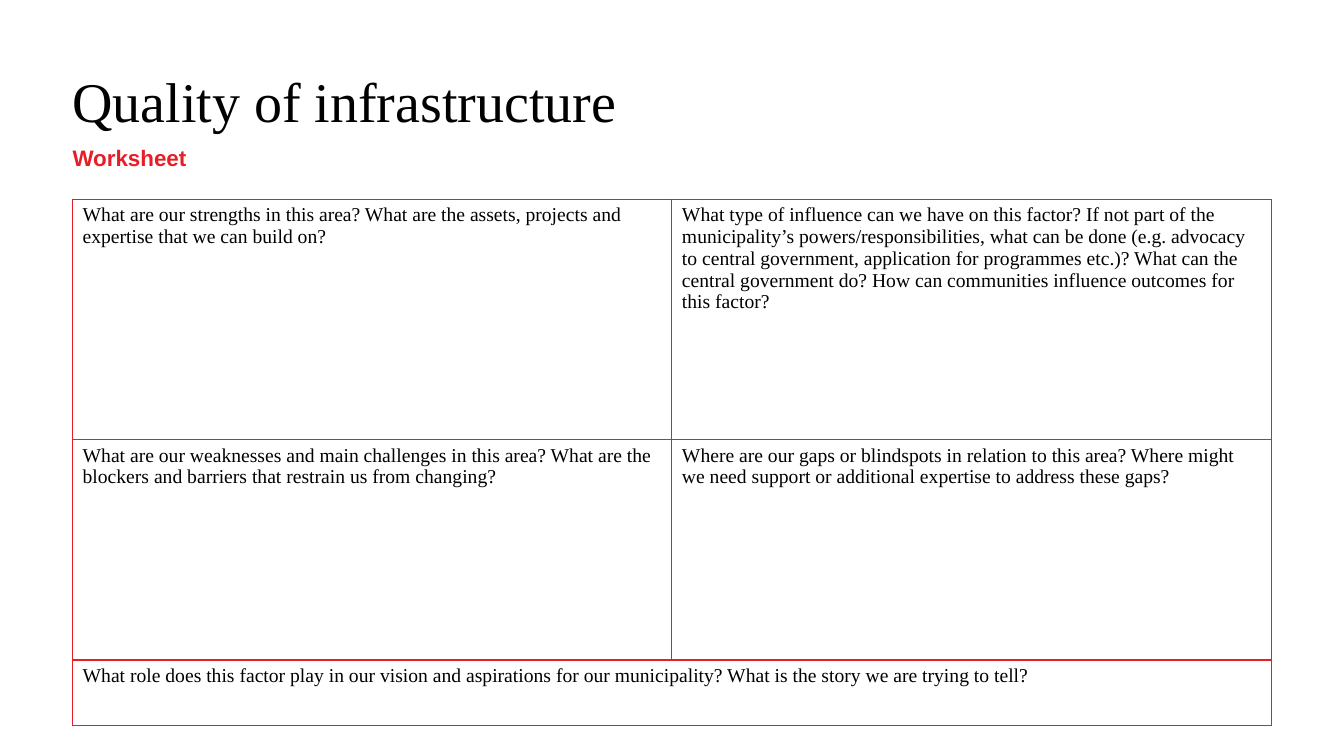
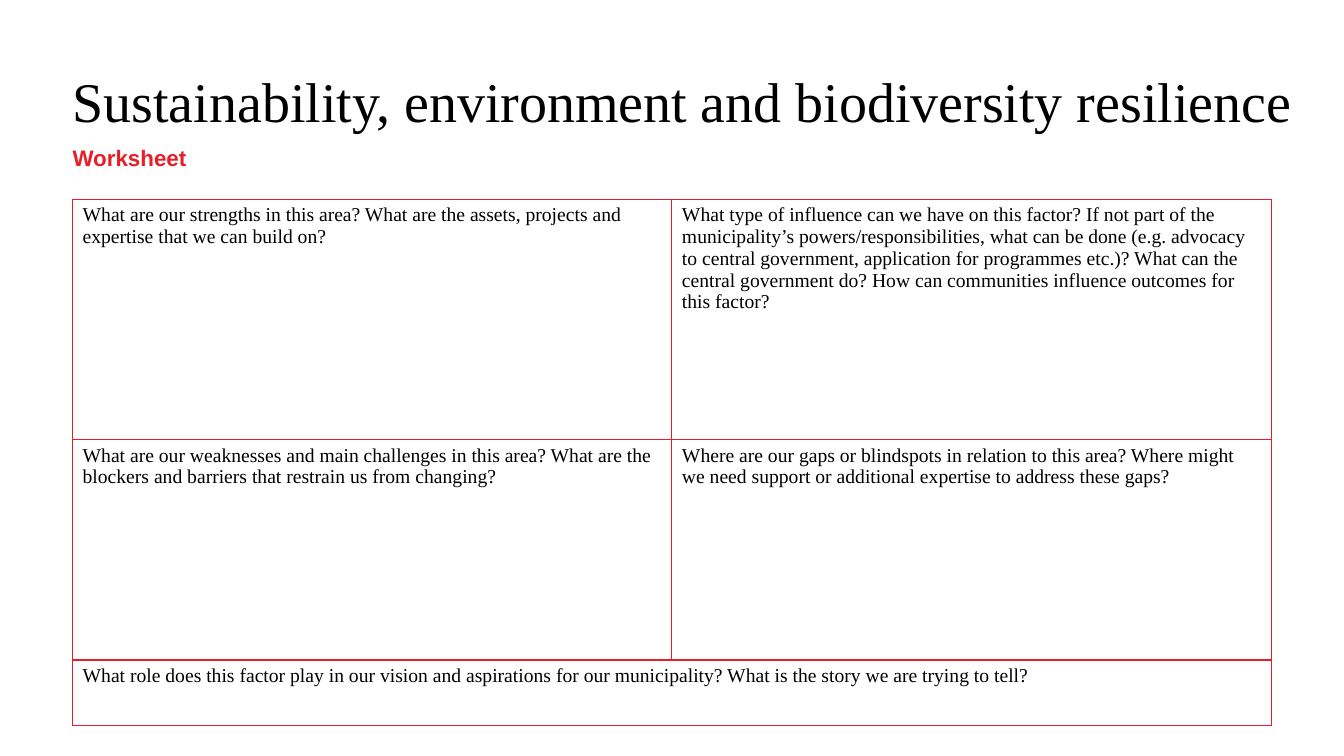
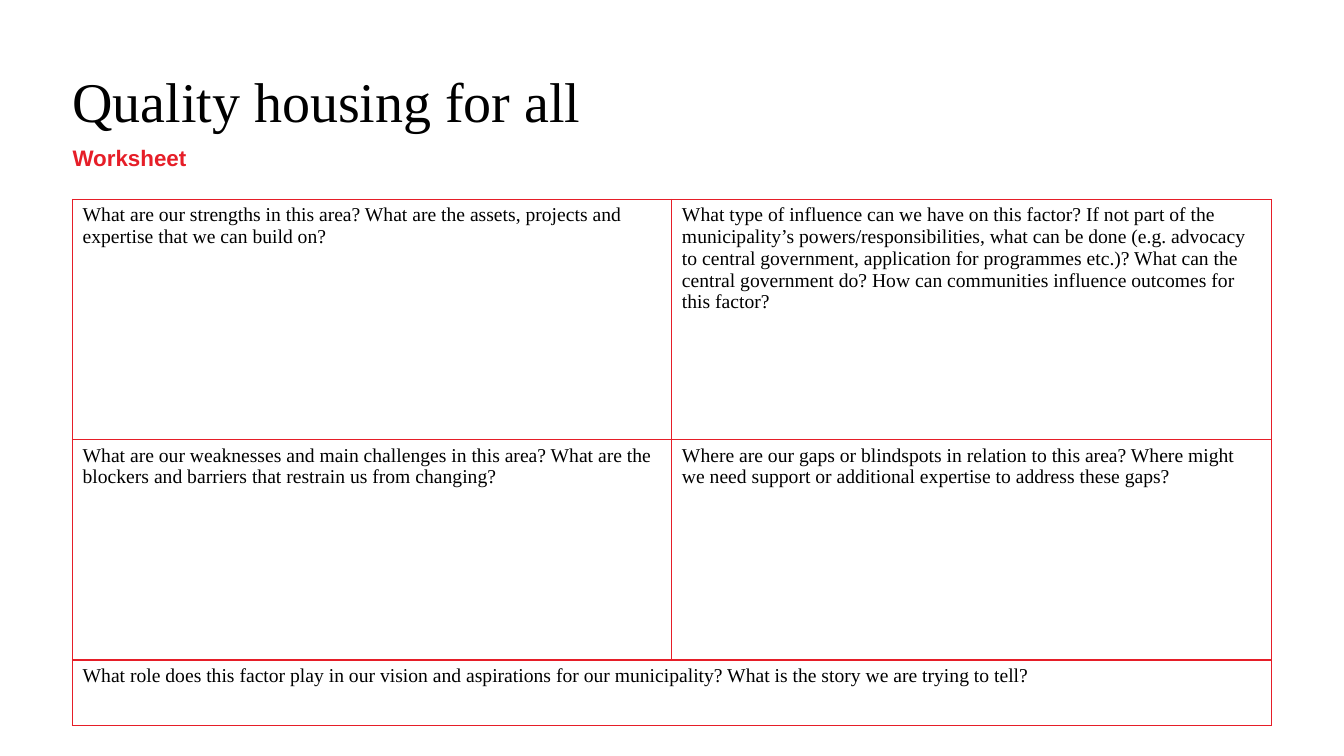
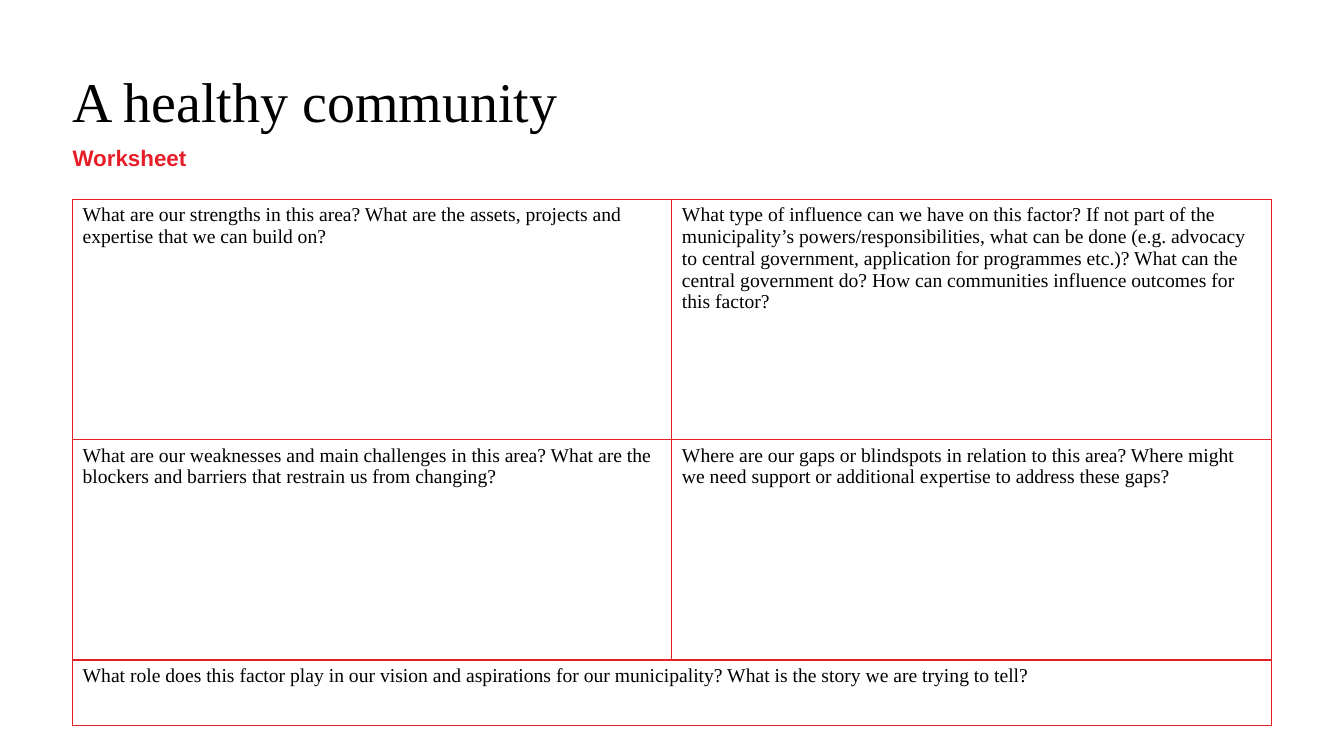
from typing import NamedTuple

from pptx import Presentation
from pptx.dml.color import RGBColor as Rgb
from pptx.enum.text import MSO_ANCHOR as Anchor, MSO_AUTO_SIZE as Fit, PP_ALIGN as Align
from pptx.oxml import parse_xml
from pptx.oxml.ns import nsdecls
from pptx.util import Pt

HUES = {"ink": "000000", "red": "E61E28", "back": "FFFFFF"}
SERIF, SANS = "Times New Roman", "Arial"
LEFT = 51.84


class Style(NamedTuple):
    font: str
    size: float
    hue: str
    bold: bool = False


class Sheet(NamedTuple):
    title: str
    width: float = 880.56


HEAD = Style(SERIF, 40, "ink")
SUB = Style(SANS, 16, "red", True)
BODY = Style(SERIF, 14, "ink")

SHEETS = [
    Sheet("Quality of infrastructure", 710.64),
    Sheet("Sustainability, environment and biodiversity resilience"),
    Sheet("Quality housing for all"),
    Sheet("A healthy community"),
]

COLS = [428.1, 428.1]
ROWS = [171.5, 157.5, 46.8]
ASKS = [
    [
        "What are our strengths in this area? What are the assets, projects and "
        "expertise that we can build on?",
        "What type of influence can we have on this factor? If not part of the "
        "municipality’s powers/responsibilities, what can be done (e.g. advocacy "
        "to central government, application for programmes etc.)? What can the "
        "central government do? How can communities influence outcomes for this factor?",
    ],
    [
        "What are our weaknesses and main challenges in this area? What are the "
        "blockers and barriers that restrain us from changing?",
        "Where are our gaps or blindspots in relation to this area? Where might we "
        "need support or additional expertise to address these gaps?",
    ],
    [
        "What role does this factor play in our vision and aspirations for our "
        "municipality? What is the story we are trying to tell?",
    ],
]


def write(frame, text: str, style: Style):
    """Fill the frame with one styled paragraph and return it."""
    frame.text = text
    para = frame.paragraphs[0]
    para.alignment = Align.LEFT
    font = para.font
    font.name, font.size, font.bold = style.font, Pt(style.size), style.bold
    font.color.rgb = Rgb.from_string(HUES[style.hue])
    return para


def place(shape, top: float, width: float, height: float) -> None:
    """Set the box on the left margin, with no insets."""
    shape.left, shape.top = Pt(LEFT), Pt(top)
    shape.width, shape.height = Pt(width), Pt(height)
    frame = shape.text_frame
    frame.margin_left = frame.margin_right = frame.margin_top = frame.margin_bottom = 0
    frame.word_wrap = True
    frame.auto_size = Fit.NONE
    frame.vertical_anchor = Anchor.TOP


def edge(cell, hue: str) -> None:
    """Draw a 1 pt line on all four sides of the cell."""
    props = cell._tc.get_or_add_tcPr()
    for spot, side in enumerate("LRTB"):
        props.insert(spot, parse_xml(
            f'<a:ln{side} {nsdecls("a")} w="{Pt(1)}"><a:solidFill>'
            f'<a:srgbClr val="{HUES[hue]}"/></a:solidFill></a:ln{side}>'))


def add_grid(slide) -> None:
    frame = slide.shapes.add_table(
        len(ROWS), len(COLS), Pt(LEFT), Pt(142.5), Pt(sum(COLS)), Pt(sum(ROWS)))
    table = frame.table
    table.first_row = table.horz_banding = False
    for col, width in zip(table.columns, COLS):
        col.width = Pt(width)
    for row, height in zip(table.rows, ROWS):
        row.height = Pt(height)
    for cell in table.iter_cells():
        cell.fill.background()
        edge(cell, "red")
    for row, asks in enumerate(ASKS):
        for col, ask in enumerate(asks):
            write(table.cell(row, col).text_frame, ask, BODY)
    table.cell(2, 0).merge(table.cell(2, 1))


def add_sheet(deck, sheet: Sheet) -> None:
    slide = deck.slides.add_slide(deck.slide_layouts[5])
    fill = slide.background.fill
    fill.solid()
    fill.fore_color.rgb = Rgb.from_string(HUES["back"])

    title = slide.shapes.title
    place(title, 51.84, sheet.width, 41.76)
    write(title.text_frame, sheet.title, HEAD).line_spacing = Pt(44)

    label = slide.shapes.add_textbox(0, 0, 0, 0)
    place(label, 102.96, 419, 19.44)
    write(label.text_frame, "Worksheet", SUB).space_after = Pt(9)

    add_grid(slide)


def main() -> None:
    deck = Presentation()
    deck.slide_width, deck.slide_height = Pt(960), Pt(540)
    for sheet in SHEETS:
        add_sheet(deck, sheet)
    deck.save("out.pptx")


if __name__ == "__main__":
    main()
